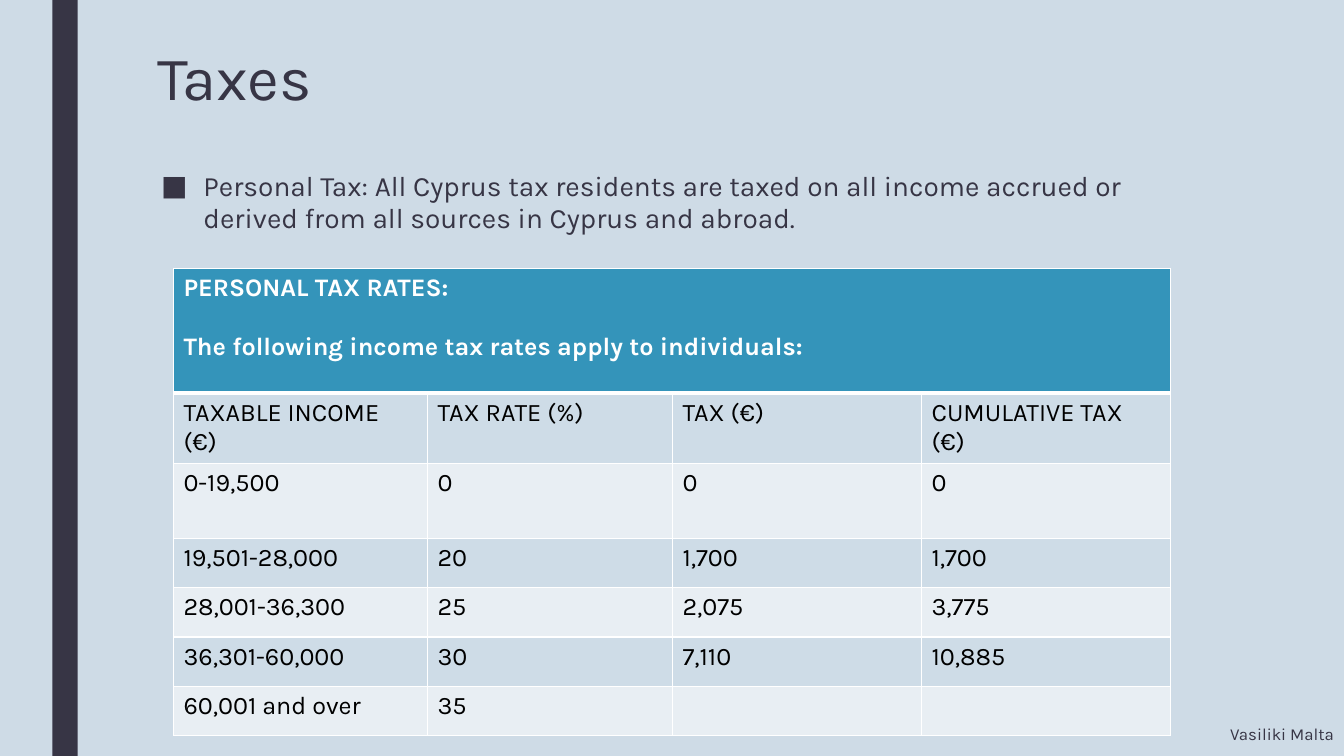
from lxml.etree import SubElement
from pptx import Presentation
from pptx.dml.color import RGBColor
from pptx.enum.shapes import MSO_SHAPE
from pptx.enum.text import MSO_ANCHOR, PP_ALIGN
from pptx.oxml.ns import qn
from pptx.util import Inches, Pt

TITLE = "Taxes"
INTRO = ("Personal Tax: All Cyprus tax residents are taxed on all income accrued or "
         "derived from all sources in Cyprus and abroad.")
AUTHOR = "Vasiliki Malta"
RATES_HEADING = ["PERSONAL TAX RATES:",
                 "The following income tax rates apply to individuals:"]
TAX_BANDS = [
    ("TAXABLE INCOME (€)", "TAX RATE (%)", "TAX (€)", "CUMULATIVE TAX (€)"),
    ("0-19,500", "0", "0", "0"),
    ("19,501-28,000", "20", "1,700", "1,700"),
    ("28,001-36,300", "25", "2,075", "3,775"),
    ("36,301-60,000", "30", "7,110", "10,885"),
    ("60,001 and over", "35", "", ""),
]
COLUMN_WIDTHS = [2.52, 2.43, 2.47, 2.47]
ROW_HEIGHTS = [1.24, 0.49, 0.74, 0.49, 0.49, 0.49, 0.49]
COLORS = {"background": "CEDBE6", "dark": "373545", "heading": "3494BA",
          "band": "CEDCE7", "light": "E8EEF3", "white": "FFFFFF", "black": "000000"}
FONT = "Karla"


def rgb(name):
    return RGBColor.from_string(COLORS[name])


def style(paragraph, size, color, bold=False):
    for run in paragraph.runs:
        run.font.name = FONT
        run.font.size = Pt(size)
        run.font.bold = bold
        run.font.color.rgb = rgb(color)


def add_text(slide, box, text, size, line_spacing=None):
    frame = slide.shapes.add_textbox(*map(Inches, box)).text_frame
    frame.word_wrap = True
    frame.text = text
    paragraph = frame.paragraphs[0]
    paragraph.line_spacing = line_spacing
    style(paragraph, size, "dark")
    return frame, paragraph


def add_bullet(paragraph, indent):
    properties = paragraph._p.get_or_add_pPr()
    properties.set("marL", str(Inches(indent)))
    properties.set("indent", str(-Inches(indent)))
    SubElement(properties, qn("a:buFont"), typeface=FONT)
    SubElement(properties, qn("a:buChar"), char="■")


def paint_cell(cell, fill, bottom=1, top=1):
    properties = cell._tc.get_or_add_tcPr()
    for side, width in (("L", 1), ("R", 1), ("T", top), ("B", bottom)):
        border = SubElement(properties, qn(f"a:ln{side}"), w=str(Pt(width)))
        SubElement(SubElement(border, qn("a:solidFill")), qn("a:srgbClr"),
                   val=COLORS["white"])
    cell.fill.solid()
    cell.fill.fore_color.rgb = rgb(fill)


def add_rates_table(slide):
    table = slide.shapes.add_table(
        len(ROW_HEIGHTS), len(COLUMN_WIDTHS), Inches(1.72), Inches(2.66),
        Inches(sum(COLUMN_WIDTHS)), Inches(sum(ROW_HEIGHTS))).table
    for column, width in zip(table.columns, COLUMN_WIDTHS):
        column.width = Inches(width)
    for row, height in zip(table.rows, ROW_HEIGHTS):
        row.height = Inches(height)

    heading = table.cell(0, 0)
    heading.merge(table.cell(0, len(COLUMN_WIDTHS) - 1))
    heading.text_frame.text = "\n".join(RATES_HEADING)
    for paragraph in heading.text_frame.paragraphs:
        style(paragraph, 18, "white", bold=True)
    heading.text_frame.paragraphs[1].space_before = Pt(21)
    for cell in table.rows[0].cells:
        paint_cell(cell, "heading", bottom=3)

    for row, band in enumerate(TAX_BANDS, start=1):
        for column, value in enumerate(band):
            cell = table.cell(row, column)
            cell.text_frame.text = value
            style(cell.text_frame.paragraphs[0], 18, "black")
            paint_cell(cell, "band" if row % 2 else "light", top=3 if row == 1 else 1)


def main():
    deck = Presentation()
    deck.slide_width, deck.slide_height = Inches(13.33), Inches(7.5)
    slide = deck.slides.add_slide(deck.slide_layouts[6])
    slide.background.fill.solid()
    slide.background.fill.fore_color.rgb = rgb("background")

    stripe = slide.shapes.add_shape(
        MSO_SHAPE.RECTANGLE, Inches(0.52), 0, Inches(0.25), deck.slide_height)
    stripe.shadow.inherit = False
    stripe.fill.solid()
    stripe.fill.fore_color.rgb = rgb("dark")
    stripe.line.fill.background()

    add_text(slide, (1.46, 0.43, 10.5, 1.62), TITLE, 44, 0.89)
    _, intro = add_text(slide, (1.5, 1.65, 10.5, 4.77), INTRO, 20, 0.94)
    intro.space_before, intro.space_after = Pt(10), Pt(2)
    add_bullet(intro, 0.42)

    add_rates_table(slide)

    footer, author = add_text(slide, (3.16, 7.06, 10.17, 0.44), AUTHOR, 12)
    footer.vertical_anchor = MSO_ANCHOR.MIDDLE
    author.alignment = PP_ALIGN.RIGHT

    deck.save("out.pptx")


if __name__ == "__main__":
    main()
